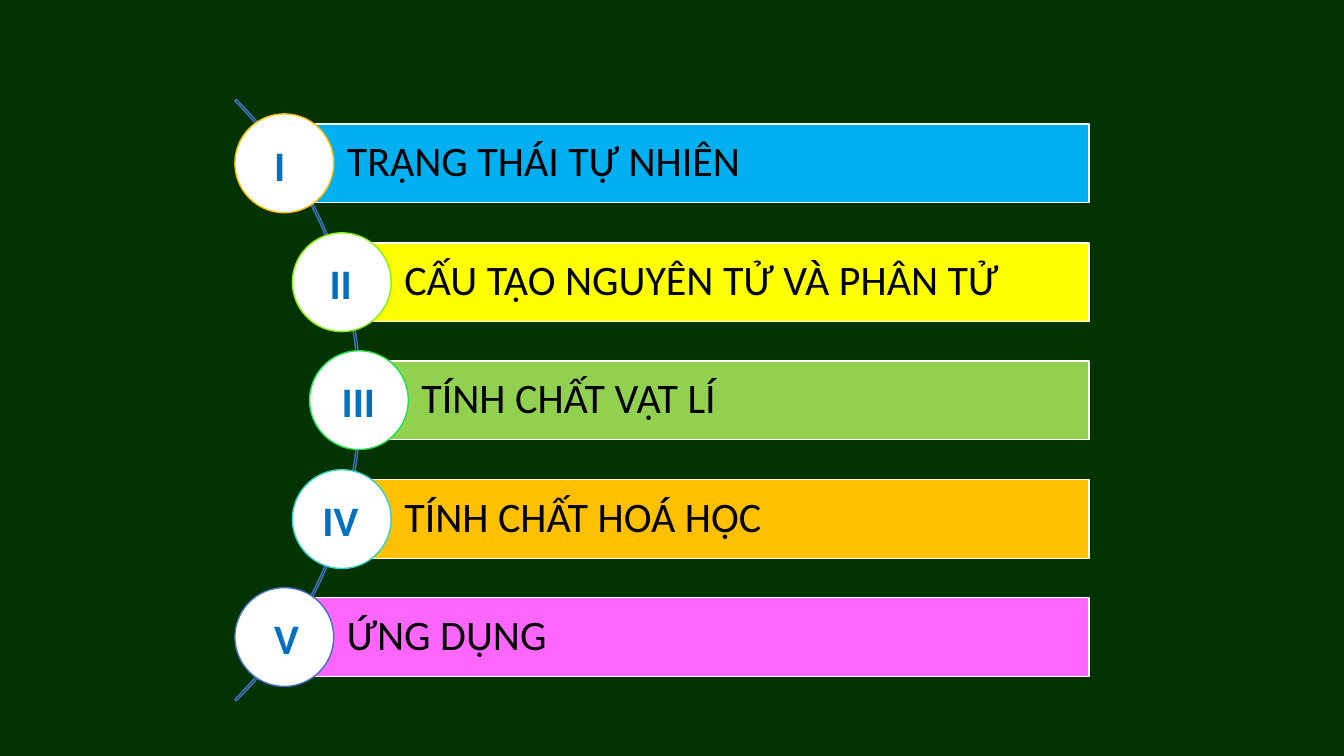
from dataclasses import dataclass

from pptx import Presentation
from pptx import util as u
from pptx.dml.color import RGBColor
from pptx.enum import shapes, text
from pptx.shapes.autoshape import Shape
from pptx.slide import Slide
from pptx.text.text import TextFrame

PX = 9144
BAR_RIGHT, BAR_HEIGHT = 1080, 78
FIRST_BAR_TOP, BAR_PITCH = 123.5, 117.5
DISC_SIZE = 98


@dataclass(frozen=True)
class Topic:
    """One numbered topic with its bar, disc and numeral."""

    numeral: str
    title: str
    bar_color: str
    ring_color: str
    bar_left: int
    numeral_left: int
    numeral_width: int


TOPICS = [
    Topic("I", "TRẠNG THÁI TỰ NHIÊN", "00B0F0", "FFC000", 282, 262, 53),
    Topic("II", "CẤU TẠO NGUYÊN TỬ VÀ PHÂN TỬ", "FFFF00", "85F010", 339, 317, 54),
    Topic("III", "TÍNH CHẤT VẬT LÍ", "92D050", "21E146", 356, 329, 73),
    Topic("IV", "TÍNH CHẤT HOÁ HỌC", "FFC000", "31D2C5", 339, 310, 68),
    Topic("V", "ỨNG DỤNG", "FF66FF", "4371C3", 282, 262, 53),
]


def px(length: int) -> u.Emu:
    """Turn px into EMU."""
    return u.Emu(length * PX)


def color(value: str) -> RGBColor:
    """Turn a hex string into a colour."""
    return RGBColor.from_string(value)


def add_outlined(slide: Slide, kind: shapes.MSO_SHAPE, box: tuple[int, int, int, int],
                 line: str, fill: str | None = None) -> Shape:
    """Add a preset shape with a thin outline and an optional fill."""
    shape = slide.shapes.add_shape(kind, *map(px, box))
    shape.shadow.inherit = False
    if fill:
        shape.fill.solid()
        shape.fill.fore_color.rgb = color(fill)
    else:
        shape.fill.background()
    shape.line.color.rgb = color(line)
    shape.line.width = u.Pt(1)
    return shape


def write(frame: TextFrame, words: str, ink: str, bold: bool) -> None:
    """Write one left-aligned line in the slide's font."""
    frame.text = words
    frame.word_wrap = True
    paragraph = frame.paragraphs[0]
    paragraph.alignment = text.PP_ALIGN.LEFT
    font = paragraph.runs[0].font
    font.name, font.size, font.bold = "Calibri", u.Pt(30), bold
    font.color.rgb = color(ink)


def add_bar(slide: Slide, topic: Topic, top: int) -> None:
    """Add the coloured bar with its title and the disc over its left end."""
    bar = add_outlined(slide, shapes.MSO_SHAPE.RECTANGLE,
                       (topic.bar_left, top, BAR_RIGHT - topic.bar_left, BAR_HEIGHT),
                       "FFFFFF", topic.bar_color)
    frame = bar.text_frame
    write(frame, topic.title, "000000", False)
    frame.vertical_anchor = text.MSO_ANCHOR.MIDDLE
    frame.margin_left = px(62)
    frame.margin_top = frame.margin_right = frame.margin_bottom = px(10)
    frame.paragraphs[0].line_spacing = 0.9
    add_outlined(slide, shapes.MSO_SHAPE.OVAL,
                 (topic.bar_left - DISC_SIZE // 2, top - 10, DISC_SIZE, DISC_SIZE),
                 topic.ring_color, "FFFFFF")


def add_numeral(slide: Slide, topic: Topic, top: int) -> None:
    """Add the Roman numeral on the disc."""
    box = (topic.numeral_left, top + 10, topic.numeral_width, 61)
    frame = slide.shapes.add_textbox(*map(px, box)).text_frame
    write(frame, topic.numeral, "0070C0", True)
    frame.auto_size = text.MSO_AUTO_SIZE.SHAPE_TO_FIT_TEXT


def main() -> None:
    """Build the table of contents slide."""
    deck = Presentation()
    deck.slide_width, deck.slide_height = px(1333), px(750)
    slide = deck.slides.add_slide(deck.slide_layouts[6])
    slide.background.fill.solid()
    slide.background.fill.fore_color.rgb = color("003300")

    arc = add_outlined(slide, shapes.MSO_SHAPE.BLOCK_ARC, (-486, -25, 844, 844), "4372C3")
    for index, adjustment in enumerate((189, 27, 0.0026)):
        arc.adjustments[index] = adjustment

    tops = [int(FIRST_BAR_TOP + BAR_PITCH * row) for row in range(len(TOPICS))]
    for add_part in (add_bar, add_numeral):
        for topic, top in zip(TOPICS, tops):
            add_part(slide, topic, top)
    deck.save("out.pptx")


if __name__ == "__main__":
    main()
